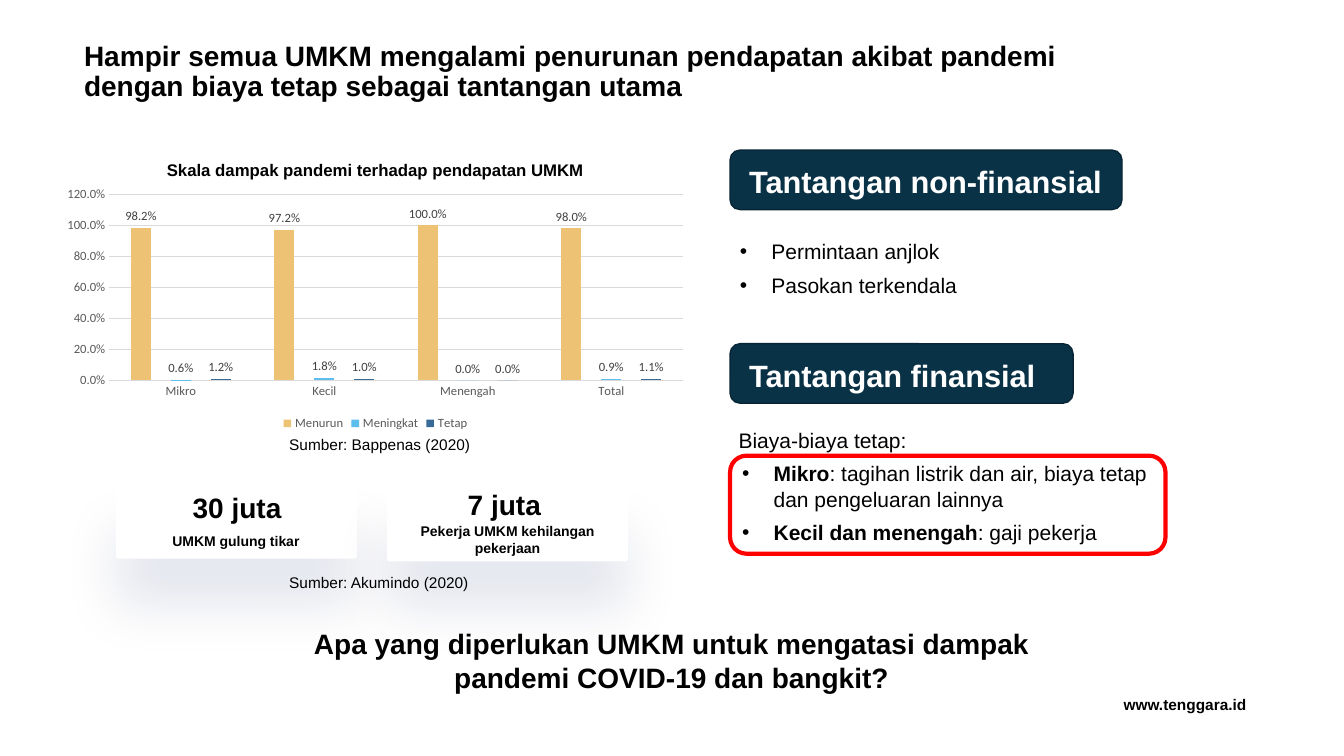
import pptx
import pptx.chart.data
import pptx.dml.color
import pptx.enum.chart
import pptx.enum.shapes
import pptx.enum.text
import pptx.oxml
import pptx.oxml.ns
import pptx.util

Pt = pptx.util.Pt
RGB = pptx.dml.color.RGBColor
ROUNDED = pptx.enum.shapes.MSO_SHAPE.ROUNDED_RECTANGLE
CENTER = pptx.enum.text.PP_ALIGN.CENTER
LEFT = pptx.enum.text.PP_ALIGN.LEFT
BLACK = RGB(0x00, 0x00, 0x00)
WHITE = RGB(0xFF, 0xFF, 0xFF)
NAVY = RGB(0x09, 0x32, 0x47)
NAVY_EDGE = RGB(0x07, 0x25, 0x35)
RED = RGB(0xFF, 0x00, 0x00)
GRID_GREY = RGB(0xD9, 0xD9, 0xD9)
AXIS_GREY = RGB(0x59, 0x59, 0x59)
LABEL_GREY = RGB(0x40, 0x40, 0x40)
CATEGORIES = ["Mikro", "Kecil", "Menengah", "Total"]
IMPACTS = [
    ("Menurun", (0.982, 0.972, 1, 0.98), RGB(0xED, 0xC2, 0x75)),
    ("Meningkat", (0.006, 0.018, 0, 0.009), RGB(0x5C, 0xBE, 0xEC)),
    ("Tetap", (0.012, 0.01, 0, 0.011), RGB(0x37, 0x6A, 0x96)),
]
NS = pptx.oxml.ns.nsdecls


def style(font, size, color=BLACK, bold=False, name="Arial"):
    font.size, font.bold, font.name = Pt(size), bold, name
    font.color.rgb = color


def add_text(shapes, box, text, size, color=BLACK, bold=False, align=LEFT):
    frame = shapes.add_textbox(*map(Pt, box)).text_frame
    frame.word_wrap = True
    frame.text = text
    paragraph = frame.paragraphs[0]
    paragraph.alignment = align
    style(paragraph.runs[0].font, size, color, bold)
    return frame


def add_rounded(shapes, box, fill=None, edge=None, edge_width=1):
    panel = shapes.add_shape(ROUNDED, *map(Pt, box))
    panel.shadow.inherit = False
    if fill is None:
        panel.fill.background()
    else:
        panel.fill.solid()
        panel.fill.fore_color.rgb = fill
    if edge is None:
        panel.line.fill.background()
    else:
        panel.line.color.rgb = edge
        panel.line.width = Pt(edge_width)
    return panel


def add_bullet(paragraph, parts, indent):
    properties = paragraph._p.get_or_add_pPr()
    properties.set("marL", str(Pt(indent)))
    properties.set("indent", str(Pt(-22.5)))
    properties.append(pptx.oxml.parse_xml(f'<a:buFont {NS("a")} typeface="Arial"/>'))
    properties.append(pptx.oxml.parse_xml(f'<a:buChar {NS("a")} char="•"/>'))
    paragraph.space_after = Pt(6)
    for words, bold in parts:
        run = paragraph.add_run()
        run.text = words
        style(run.font, 15, bold=bold)


def add_heading(shapes, box):
    heading = add_text(
        shapes, box,
        "Hampir semua UMKM mengalami penurunan pendapatan akibat pandemi "
        "dengan biaya tetap sebagai tantangan utama", 20, bold=True)
    heading.margin_left = heading.margin_right = heading.margin_bottom = 0
    heading.margin_top = Pt(1)
    heading.paragraphs[0].line_spacing = 0.9


def set_layout(parent, index, target="", **fractions):
    for old in parent.findall(pptx.oxml.ns.qn("c:layout")):
        parent.remove(old)
    modes = '<c:xMode val="edge"/><c:yMode val="edge"/>'
    values = "".join(f'<c:{key} val="{value}"/>' for key, value in fractions.items())
    parent.insert(index, pptx.oxml.parse_xml(
        f'<c:layout {NS("c")}><c:manualLayout>{target}{modes}{values}'
        '</c:manualLayout></c:layout>'))


def add_impact_chart(shapes, box):
    impact_data = pptx.chart.data.CategoryChartData(number_format="0.0%")
    impact_data.categories = CATEGORIES
    for name, values, _ in IMPACTS:
        impact_data.add_series(name, values)
    chart = shapes.add_chart(
        pptx.enum.chart.XL_CHART_TYPE.COLUMN_CLUSTERED, *map(Pt, box), impact_data).chart
    style(chart.font, 10, name="Calibri")

    chart.has_title = True
    caption = chart.chart_title.text_frame
    caption.text = "Skala dampak pandemi terhadap pendapatan UMKM"
    style(caption.paragraphs[0].runs[0].font, 12, bold=True)
    set_layout(chart.chart_title._element, 1, x=0.17, y=0.05)
    set_layout(chart._chartSpace.chart.plotArea, 0, '<c:layoutTarget val="inner"/>',
               x=0.085, y=0.178, w=0.894, h=0.637)

    chart.has_legend = True
    chart.legend.position = pptx.enum.chart.XL_LEGEND_POSITION.BOTTOM
    chart.legend.include_in_layout = False
    style(chart.legend.font, 9, AXIS_GREY, name="Calibri")

    shares = chart.value_axis
    for axis in (chart.category_axis, shares):
        axis.major_tick_mark = axis.minor_tick_mark = pptx.enum.chart.XL_TICK_MARK.NONE
        style(axis.tick_labels.font, 9, AXIS_GREY, name="Calibri")
    shares.minimum_scale, shares.maximum_scale, shares.major_unit = 0, 1.2, 0.2
    shares.tick_labels.number_format = "0.0%"
    shares.tick_labels.number_format_is_linked = False
    shares.format.line.fill.background()
    for line in (chart.category_axis.format.line, shares.major_gridlines.format.line):
        line.color.rgb = GRID_GREY
        line.width = Pt(0.75)

    plot = chart.plots[0]
    plot.gap_width, plot.overlap, plot.vary_by_categories = 219, -100, False
    for series, (_, _, color) in zip(plot.series, IMPACTS):
        series.format.fill.solid()
        series.format.fill.fore_color.rgb = color
        labels = series.data_labels
        labels.show_value = True
        labels.position = pptx.enum.chart.XL_LABEL_POSITION.OUTSIDE_END
        labels.number_format = "0.0%"
        labels.number_format_is_linked = False
        style(labels.font, 9, LABEL_GREY, name="Calibri")


def add_figure_card(shapes, box, figure, figure_box, caption, caption_box):
    left, top, _, _ = box
    card = shapes.add_group_shape().shapes
    panel = add_rounded(card, box, WHITE)
    panel.adjustments[0] = 0.031
    effects = panel._element.spPr.find(pptx.oxml.ns.qn("a:effectLst"))
    effects.append(pptx.oxml.parse_xml(
        f'<a:outerShdw {NS("a")} blurRad="{Pt(39)}" dist="{Pt(33)}" dir="5400000" '
        'algn="t" rotWithShape="0"><a:srgbClr val="002060"><a:alpha val="11000"/>'
        '</a:srgbClr></a:outerShdw>'))
    for words, (dx, dy, width, height), size, align in (
            (figure, figure_box, 20, LEFT), (caption, caption_box, 10, CENTER)):
        add_text(card, (left + dx, top + dy, width, height), words, size,
                 bold=True, align=align)


def add_banner(shapes, box, words):
    left, top, width, _ = box
    add_rounded(shapes, box, NAVY, NAVY_EDGE)
    add_text(shapes, (left + 6.5, top + 5.8, width + 3, 34), words, 22, WHITE, True)


def add_non_financial(shapes, box):
    left, top, width, _ = box
    add_banner(shapes, (left, top, 280, 42.5), "Tantangan non-finansial")
    challenges = shapes.add_textbox(*map(Pt, (left, top + 59.8, width, 50))).text_frame
    challenges.word_wrap = True
    add_bullet(challenges.paragraphs[0], [("Permintaan anjlok", False)], 22.5)
    add_bullet(challenges.add_paragraph(), [("Pasokan terkendala", False)], 22.5)


def add_financial(shapes, box):
    left, top, width, _ = box
    add_banner(shapes, (left, top, 245, 42.5), "Tantangan finansial")
    costs = add_text(shapes, (left - 34.5, top + 56.2, width, 117),
                     "Biaya-biaya tetap:", 15)
    intro = costs.paragraphs[0]
    intro._p.get_or_add_pPr().set("marL", str(Pt(33.5)))
    intro.space_after = Pt(6)
    for scale, burden in (
            ("Mikro", ": tagihan listrik dan air, biaya tetap dan pengeluaran lainnya"),
            ("Kecil dan menengah", ": gaji pekerja")):
        item = costs.add_paragraph()
        item.level = 1
        add_bullet(item, [(scale, True), (burden, False)], 58.5)
    add_rounded(shapes, (left, top + 80, 311, 70), edge=RED, edge_width=3)


def add_closing(shapes, box):
    left, top, _, _ = box
    add_text(shapes, box, "Apa yang diperlukan UMKM untuk mengatasi dampak "
             "pandemi COVID-19 dan bangkit?", 20, bold=True, align=CENTER)
    add_text(shapes, (left + 618.5, top + 49, 149, 21), "www.tenggara.id", 11, bold=True)


def main():
    deck = pptx.Presentation()
    deck.slide_width, deck.slide_height = Pt(960), Pt(540)
    shapes = deck.slides.add_slide(deck.slide_layouts[6]).shapes
    add_heading(shapes, (60, 29, 699, 73))
    add_impact_chart(shapes, (39, 101.5, 458.5, 209))
    add_figure_card(shapes, (83, 345, 172, 54), "30 juta", (47.5, 1.5, 84, 32),
                    "UMKM gulung tikar", (-3.5, 31.5, 178, 20))
    add_figure_card(shapes, (276.5, 347, 172, 54), "7 juta", (50.5, -2, 73, 32),
                    "Pekerja UMKM kehilangan pekerjaan", (-3, 23, 178, 32))
    for top, source in ((307.5, "Sumber: Bappenas (2020)"),
                        (406, "Sumber: Akumindo (2020)")):
        add_text(shapes, (199.5, top, 150, 21), source, 11)
    add_non_financial(shapes, (521.5, 107.2, 371, 110))
    add_financial(shapes, (521.5, 245.5, 356, 173))
    add_closing(shapes, (177, 444.2, 605.5, 55.5))
    deck.save("out.pptx")


if __name__ == "__main__":
    main()
